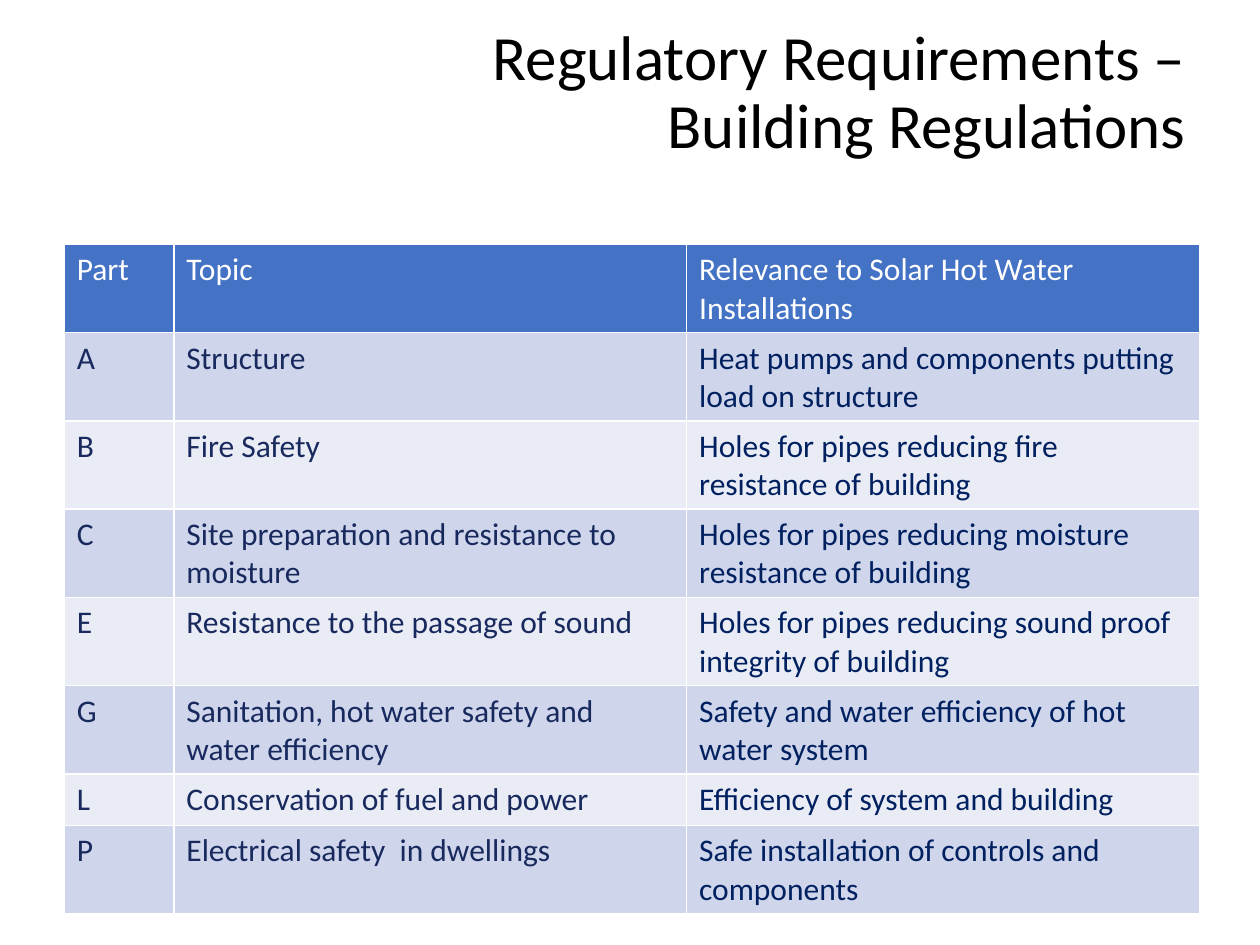
from pptx import Presentation
from pptx.dml.color import RGBColor
from pptx.enum.text import MSO_ANCHOR, PP_ALIGN
from pptx.util import Inches, Pt

MIDDLE = MSO_ANCHOR.MIDDLE
RIGHT = PP_ALIGN.RIGHT

COLOURS = {
    "title": "000000",
    "header_fill": "4472C4",
    "header_text": "FFFFFF",
    "odd_row": "CFD5EA",
    "even_row": "E9EBF5",
    "topic_text": "18295E",
    "relevance_text": "002060",
}
TITLE_LINES = ["Regulatory Requirements –", "Building Regulations"]
ROWS = [
    ("Part", "Topic", "Relevance to Solar Hot Water Installations"),
    ("A", "Structure", "Heat pumps and components putting load on structure"),
    ("B", "Fire Safety", "Holes for pipes reducing fire resistance of building"),
    ("C", "Site preparation and resistance to moisture",
     "Holes for pipes reducing moisture resistance of building"),
    ("E", "Resistance to the passage of sound",
     "Holes for pipes reducing sound proof integrity of building"),
    ("G", "Sanitation, hot water safety and water efficiency",
     "Safety and water efficiency of hot water system"),
    ("L", "Conservation of fuel and power", "Efficiency of system and building"),
    ("P", "Electrical safety  in dwellings",
     "Safe installation of controls and components"),
]
COLUMN_WIDTHS = [Inches(0.87), Inches(4.07), Inches(4.07)]
ROW_HEIGHT = Inches(0.41)


def format_font(font, size, colour):
    values = {"name": "Calibri", "size": Pt(size), "bold": False}
    for name, value in values.items():
        setattr(font, name, value)
    font.color.rgb = RGBColor.from_string(COLOURS[colour])


presentation = Presentation()
presentation.slide_width = Inches(10)
presentation.slide_height = Inches(7.5)
slide = presentation.slides.add_slide(presentation.slide_layouts[6])

# Title
title = slide.shapes.add_textbox(Inches(2.56), Inches(0.21), Inches(6.95), Inches(1.08))
title.text_frame.word_wrap = True
title.text_frame.vertical_anchor = MIDDLE
paragraph = title.text_frame.paragraphs[0]
paragraph.alignment = RIGHT
paragraph.line_spacing = 0.9
for index, line in enumerate(TITLE_LINES):
    if index:
        paragraph.add_line_break()
    run = paragraph.add_run()
    run.text = line
    format_font(run.font, 36, "title")

# Table: the default style draws the white rules between cells
table = slide.shapes.add_table(
    len(ROWS), len(COLUMN_WIDTHS), Inches(0.51), Inches(1.94),
    sum(COLUMN_WIDTHS), ROW_HEIGHT * len(ROWS)).table
for column, width in zip(table.columns, COLUMN_WIDTHS):
    column.width = width

for row_index, texts in enumerate(ROWS):
    table.rows[row_index].height = ROW_HEIGHT
    if row_index == 0:
        fill, text_colours = "header_fill", ["header_text"] * 3
    else:
        fill = "odd_row" if row_index % 2 else "even_row"
        text_colours = ["topic_text", "topic_text", "relevance_text"]
    for column_index, text in enumerate(texts):
        cell = table.cell(row_index, column_index)
        cell.fill.solid()
        cell.fill.fore_color.rgb = RGBColor.from_string(COLOURS[fill])
        run = cell.text_frame.paragraphs[0].add_run()
        run.text = text
        format_font(run.font, 18, text_colours[column_index])

presentation.save("out.pptx")
